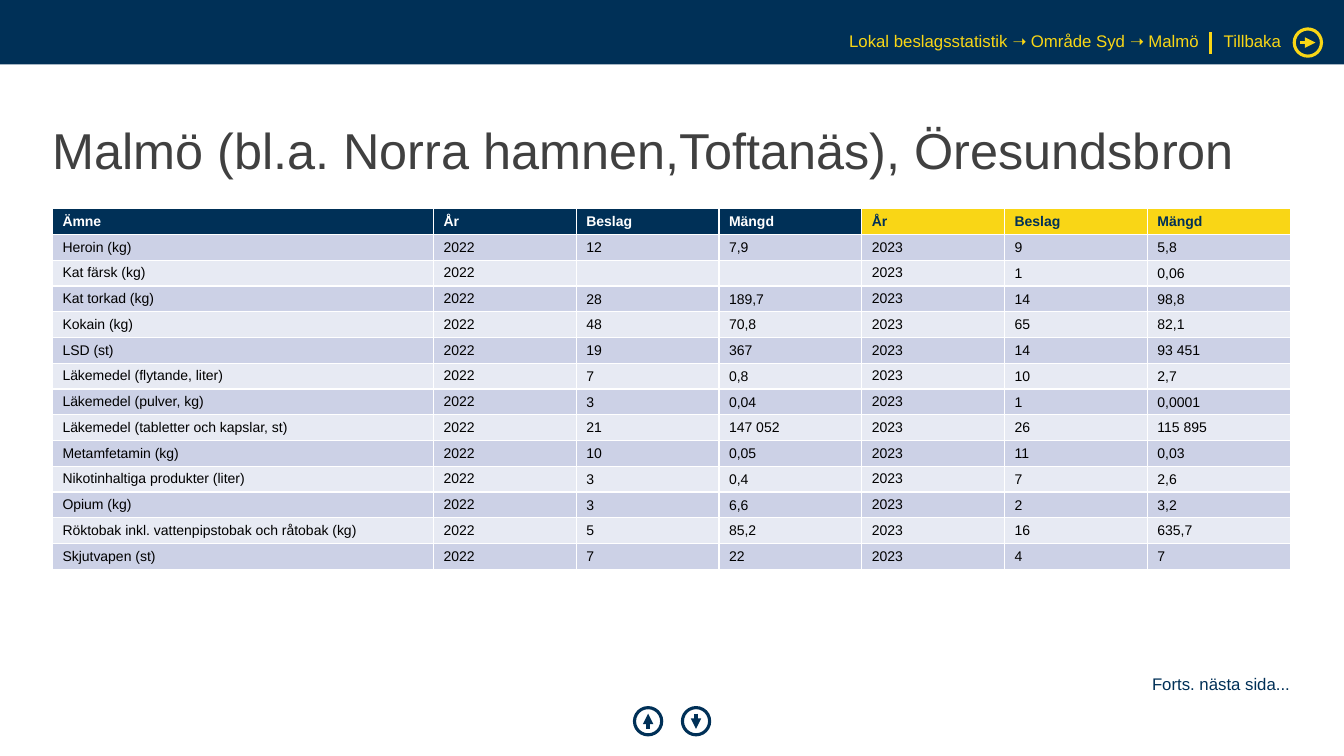
"""Build the Malmö seizure statistics slide."""
import math

import pptx
import pptx.dml.color
import pptx.enum.shapes
import pptx.enum.text
import pptx.oxml
import pptx.oxml.ns
import pptx.util

Pt = pptx.util.Pt
RGB = pptx.dml.color.RGBColor
SHAPE = pptx.enum.shapes.MSO_SHAPE
ANCHOR = pptx.enum.text.MSO_ANCHOR
ALIGN = pptx.enum.text.PP_ALIGN

NAVY = RGB(0x00, 0x30, 0x57)
YELLOW = RGB(0xF9, 0xD6, 0x16)
WHITE = RGB(0xFF, 0xFF, 0xFF)
BLACK = RGB(0x00, 0x00, 0x00)
GREY = RGB(0x40, 0x40, 0x40)
BAND_DARK = RGB(0xCC, 0xD1, 0xE6)
BAND_LIGHT = RGB(0xE7, 0xEA, 0xF3)

LEFT, WIDTH = 37.44, 884.16
COLUMNS = [272.16] + [102] * 6
HEADER = ["Ämne"] + ["År", "Beslag", "Mängd"] * 2
SEIZURES = [
    ("Heroin (kg)", "12", "7,9", "9", "5,8"),
    ("Kat färsk (kg)", "", "", "1", "0,06"),
    ("Kat torkad (kg)", "28", "189,7", "14", "98,8"),
    ("Kokain (kg)", "48", "70,8", "65", "82,1"),
    ("LSD (st)", "19", "367", "14", "93 451"),
    ("Läkemedel (flytande, liter)", "7", "0,8", "10", "2,7"),
    ("Läkemedel (pulver, kg)", "3", "0,04", "1", "0,0001"),
    ("Läkemedel (tabletter och kapslar, st)", "21", "147 052", "26", "115 895"),
    ("Metamfetamin (kg)", "10", "0,05", "11", "0,03"),
    ("Nikotinhaltiga produkter (liter)", "3", "0,4", "7", "2,6"),
    ("Opium (kg)", "3", "6,6", "2", "3,2"),
    ("Röktobak inkl. vattenpipstobak och råtobak (kg)", "5", "85,2", "16", "635,7"),
    ("Skjutvapen (st)", "7", "22", "4", "7"),
]


def apply(target, values):
    for name, value in values.items():
        setattr(target, name, value)


class SlideBuilder:
    font = "Arial"
    margins = ("margin_left", "margin_top", "margin_right", "margin_bottom")

    def __init__(self, prs):
        self.s = prs.slides.add_slide(prs.slide_layouts[5])

    def add_text(self, p, text, size, color, **font):
        if not text:
            p._p.get_or_add_endParaRPr().set("sz", str(size * 100))
            return
        r = p.add_run()
        r.text = text
        apply(r.font, {"name": self.font, "size": Pt(size), **font})
        r.font.color.rgb = color

    def fill_frame(self, tf, text, size, color, align, anchor):
        apply(tf, {"word_wrap": True, "vertical_anchor": anchor,
                   "auto_size": pptx.enum.text.MSO_AUTO_SIZE.NONE,
                   **dict.fromkeys(self.margins, 0)})
        p = tf.paragraphs[0]
        apply(p, {"alignment": align, "line_spacing": 0.9})
        self.add_text(p, text, size, color)

    def title(self, text, x, y, w, h):
        sp = self.s.shapes.title
        apply(sp, {"left": Pt(x), "top": Pt(y), "width": Pt(w), "height": Pt(h)})
        self.fill_frame(sp.text_frame, text, 36, GREY, ALIGN.LEFT, ANCHOR.MIDDLE)

    def text(self, text, x, y, w, color, align=ALIGN.LEFT):
        sp = self.s.shapes.add_textbox(Pt(x), Pt(y), Pt(w), Pt(13.68))
        self.fill_frame(sp.text_frame, text, 12, color, align, ANCHOR.TOP)

    def shape(self, kind, x, y, w, h, fill=None, line=None):
        sp = self.s.shapes.add_shape(kind, Pt(x), Pt(y), Pt(w), Pt(h))
        sp.shadow.inherit = False
        if fill is None:
            sp.fill.background()
        else:
            sp.fill.solid()
            sp.fill.fore_color.rgb = fill
        if line is None:
            sp.line.fill.background()
        else:
            sp.line.color.rgb = line
            sp.line.width = Pt(2.25)
        return sp

    def line(self, x1, y1, x2, y2, color, width=2.25, arrow=False):
        sp = self.s.shapes.add_connector(
            pptx.enum.shapes.MSO_CONNECTOR.STRAIGHT, Pt(x1), Pt(y1), Pt(x2), Pt(y2))
        sp.line.color.rgb = color
        sp.line.width = Pt(width)
        if arrow:
            ln = sp.line._get_or_add_ln()
            tail = pptx.oxml.parse_xml(
                f'<a:tailEnd {pptx.oxml.ns.nsdecls("a")} type="triangle"/>')
            ln.append(tail)
        sp._element.spPr.append(
            pptx.oxml.parse_xml(f'<a:effectLst {pptx.oxml.ns.nsdecls("a")}/>'))

    def arrow_button(self, cx, cy, angle, color, size=19.44, reach=5.4):
        dx = reach * math.cos(math.radians(angle))
        dy = reach * math.sin(math.radians(angle))
        self.line(cx - dx, cy - dy, cx + dx, cy + dy, color, 2.5, arrow=True)
        sp = self.shape(SHAPE.OVAL, cx - size / 2, cy - size / 2, size, size, line=color)
        sp.rotation = angle

    def cell(self, cell, text, fill, color, bold, anchor, tight):
        cell.fill.solid()
        cell.fill.fore_color.rgb = fill
        cell.vertical_anchor = anchor
        if tight:
            apply(cell, dict(zip(self.margins, map(Pt, (7.2, 0.7, 0.7, 0)))))
        self.add_text(cell.text_frame.paragraphs[0], text, 10, color, bold=bold)

    def table(self, x, y, columns, row_height, header, rows):
        count = len(rows) + 1
        table = self.s.shapes.add_table(
            count, len(columns), Pt(x), Pt(y), Pt(sum(columns)), Pt(row_height * count)).table
        for column, width in zip(table.columns, columns):
            column.width = Pt(width)
        for row in table.rows:
            row.height = Pt(row_height)
        for j, text in enumerate(header):
            fill, color = (NAVY, WHITE) if j < 4 else (YELLOW, NAVY)
            self.cell(table.cell(0, j), text, fill, color, True, ANCHOR.TOP, False)
        anchors = [ANCHOR.BOTTOM] + [ANCHOR.TOP, ANCHOR.MIDDLE, ANCHOR.MIDDLE] * 2
        for i, (name, *values) in enumerate(rows, 1):
            texts = [name, "2022", *values[:2], "2023", *values[2:]]
            fill = BAND_DARK if i % 2 else BAND_LIGHT
            for j, (text, anchor) in enumerate(zip(texts, anchors)):
                tight = i > 1 and anchor == ANCHOR.MIDDLE
                self.cell(table.cell(i, j), text, fill, BLACK, False, anchor, tight)


def main():
    prs = pptx.Presentation()
    apply(prs, {"slide_width": Pt(960), "slide_height": Pt(540)})
    b = SlideBuilder(prs)
    b.shape(SHAPE.RECTANGLE, 0, 0, 960, 46.08, fill=NAVY)
    b.title("Malmö (bl.a. Norra hamnen,Toftanäs), Öresundsbron", LEFT, 56.88, WIDTH, 104.4)
    b.arrow_button(934.2, 30.42, 0, YELLOW)
    b.text("Tillbaka", 874.08, 23.76, 85.92, YELLOW)
    b.line(864.72, 23.04, 864.72, 38.88, YELLOW)
    b.table(LEFT, 149.04, COLUMNS, 17.28, HEADER, SEIZURES)
    b.arrow_button(497.16, 515.16, 90, NAVY)
    b.arrow_button(462.96, 515.16, 270, NAVY)
    b.text("Lokal beslagsstatistik ➝ Område Syd ➝ Malmö", 396, 23.76, 460.8, YELLOW, ALIGN.RIGHT)
    b.text("Forts. nästa sida...", 460.8, 483.12, 460.8, NAVY, ALIGN.RIGHT)
    prs.save("out.pptx")


if __name__ == "__main__":
    main()
